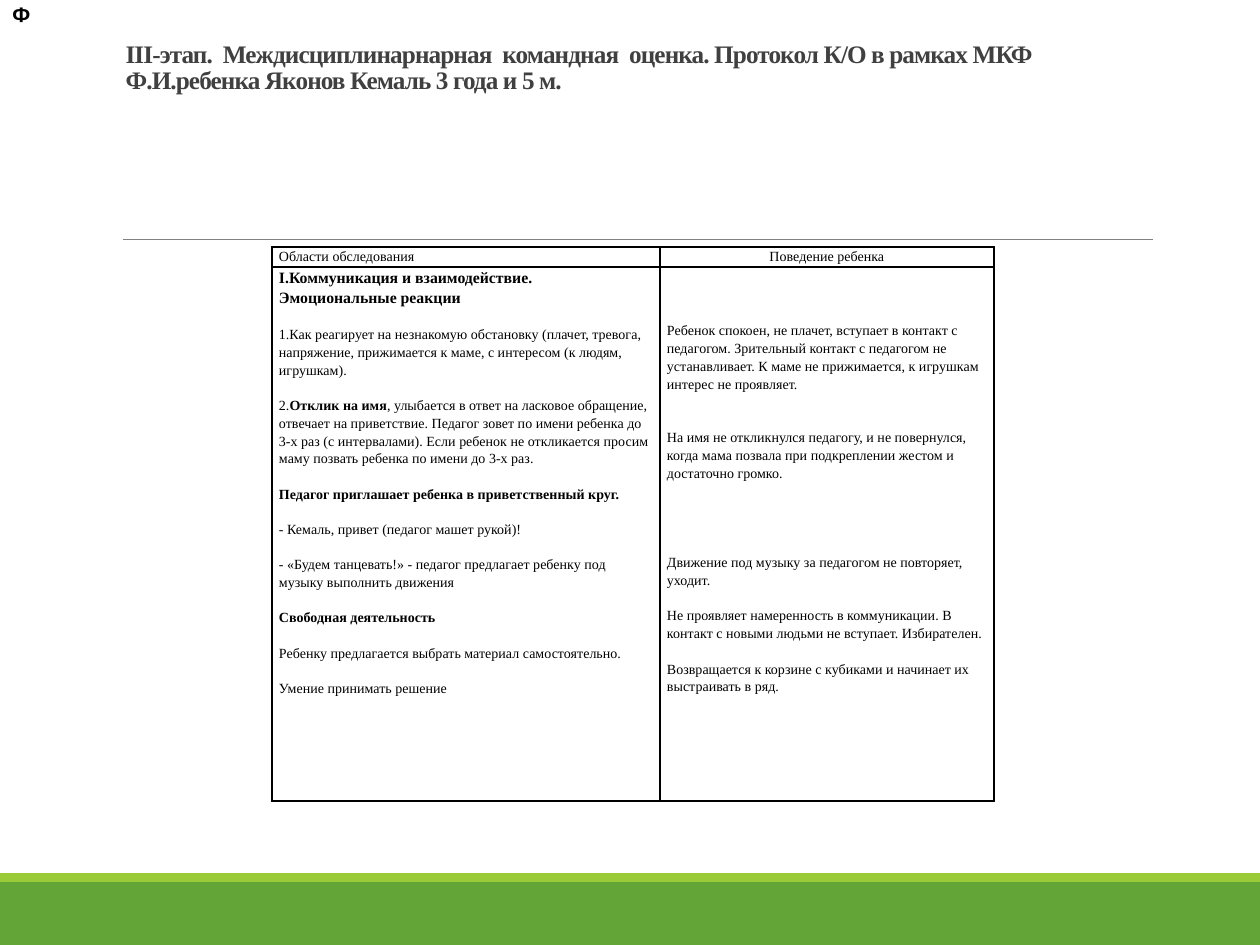
from lxml.etree import SubElement
from pptx import Presentation
from pptx.dml.color import RGBColor
from pptx.enum.shapes import MSO_CONNECTOR, MSO_SHAPE
from pptx.enum.text import MSO_ANCHOR, MSO_AUTO_SIZE, PP_ALIGN
from pptx.oxml.ns import qn
from pptx.util import Pt

COLORS = {
    "ink": "000000",
    "title": "404040",
    "rule": "808080",
    "green": "63A537",
    "lime": "99CB38",
    "paper": "FFFFFF",
}
SERIF = "Times New Roman"
TITLE = {"name": SERIF, "size": Pt(14.4), "bold": True}
BODY = {"name": SERIF, "size": Pt(8), "bold": False}
BOLD = {**BODY, "bold": True}
HEAD = {**BOLD, "size": Pt(9)}
MARK = {"name": "Arial", "size": Pt(12), "bold": True}

HEADS = [
    ("Области обследования", PP_ALIGN.LEFT),
    ("Поведение ребенка", PP_ALIGN.CENTER),
]
TASKS = [
    [("I.Коммуникация и взаимодействие. Эмоциональные реакции", HEAD)],
    [("1.Как реагирует на незнакомую обстановку (плачет, тревога, напряжение, "
      "прижимается к маме, с интересом (к людям, игрушкам).", BODY)],
    [("2.", BODY), ("Отклик на имя", BOLD),
     (", улыбается в ответ на ласковое обращение, отвечает на приветствие. "
      "Педагог зовет по имени ребенка до 3-х раз (с интервалами). Если ребенок "
      "не откликается просим маму позвать ребенка по имени до 3-х раз.", BODY)],
    [("Педагог приглашает ребенка в приветственный круг.", BOLD)],
    [("- Кемаль, привет (педагог машет рукой)!", BODY)],
    [("- «Будем танцевать!» - педагог предлагает ребенку под музыку "
      "выполнить движения", BODY)],
    [("Свободная деятельность", BOLD)],
    [("Ребенку предлагается выбрать материал самостоятельно.", BODY)],
    [("Умение принимать решение", BODY)],
]
NOTES = [
    ("Ребенок спокоен, не плачет, вступает в контакт с педагогом. Зрительный "
     "контакт с педагогом не устанавливает. К маме не прижимается, к игрушкам "
     "интерес не проявляет.", 20.3),
    ("На имя не откликнулся педагогу, и не повернулся, когда мама позвала при "
     "подкреплении жестом и достаточно громко.", 40.7),
    ("Движение под музыку за педагогом не повторяет, уходит.", 10.2),
    ("Не проявляет намеренность в коммуникации. В контакт с новыми людьми "
     "не вступает. Избирателен.", 10.2),
    ("Возвращается к корзине с кубиками и начинает их выстраивать в ряд.", 0),
]


def px(size):
    return round(size * 914400 / 126)


def tint(name):
    return RGBColor.from_string(COLORS[name])


def apply(target, values):
    for key, value in values.items():
        setattr(target, key, value)


class Deck:
    def __init__(self, wide, high):
        self.file = Presentation()
        self.file.slide_width, self.file.slide_height = px(wide), px(high)
        self.slide = self.file.slides.add_slide(self.file.slide_layouts[5])
        self.shapes = self.slide.shapes

    def words(self, para, text, style, color="ink"):
        run = para.add_run()
        run.text = text
        apply(run.font, style)
        run.font.color.rgb = tint(color)
        return run

    def title(self, box, lines):
        shape = self.shapes.title
        apply(shape, dict(zip(("left", "top", "width", "height"), map(px, box))))
        frame = shape.text_frame
        apply(frame, {"auto_size": MSO_AUTO_SIZE.NONE, "word_wrap": True,
                      "vertical_anchor": MSO_ANCHOR.BOTTOM})
        para = frame.paragraphs[0]
        apply(para, {"alignment": PP_ALIGN.LEFT, "line_spacing": 0.85})
        for index, line in enumerate(lines):
            if index:
                para.add_line_break()
            run = self.words(para, line, TITLE, "title")
            run._r.get_or_add_rPr().set("spc", "-50")

    def band(self, box, color):
        shape = self.shapes.add_shape(MSO_SHAPE.RECTANGLE, *map(px, box))
        shape.shadow.inherit = False
        shape.fill.solid()
        shape.fill.fore_color.rgb = tint(color)
        shape.line.fill.background()

    def rule(self, ends, color):
        line = self.shapes.add_connector(MSO_CONNECTOR.STRAIGHT, *map(px, ends))
        line.line.color.rgb = tint(color)
        line.line.width = Pt(0.5)
        SubElement(line._element.spPr, qn("a:effectLst"))

    def label(self, box, text):
        frame = self.shapes.add_textbox(*map(px, box)).text_frame
        apply(frame, {"word_wrap": True, "margin_top": px(8),
                      "vertical_anchor": MSO_ANCHOR.TOP})
        self.words(frame.paragraphs[0], text, MARK)

    def table(self, spot, cols, rows):
        box = (*spot, sum(cols), sum(rows))
        grid = self.shapes.add_table(len(rows), len(cols), *map(px, box)).table
        apply(grid, {"first_row": False, "horz_banding": False})
        for col, wide in zip(grid.columns, cols):
            col.width = px(wide)
        for row, high in zip(grid.rows, rows):
            row.height = px(high)
        for cell in grid.iter_cells():
            apply(cell, {"margin_left": px(7), "margin_right": px(7),
                         "margin_top": 0, "margin_bottom": 0})
            self.border(cell)
            cell.fill.solid()
            cell.fill.fore_color.rgb = tint("paper")
        return grid

    def border(self, cell):
        props = cell._tc.get_or_add_tcPr()
        for side in ("lnL", "lnR", "lnT", "lnB"):
            line = SubElement(props, qn("a:" + side), w=str(Pt(1)))
            fill = SubElement(line, qn("a:solidFill"))
            SubElement(fill, qn("a:srgbClr"), val=COLORS["ink"])

    def fill(self, cell, items):
        frame = cell.text_frame
        for index, (runs, style) in enumerate(items):
            para = frame.add_paragraph() if index else frame.paragraphs[0]
            apply(para, {"line_spacing": 1.15, **style})
            for text, font in runs:
                self.words(para, text, font)

    def save(self):
        self.file.save("out.pptx")


def main():
    deck = Deck(1260, 945)
    deck.band((0, 882, 1260, 63), "green")
    deck.band((0, 873, 1260, 9), "lime")
    deck.rule((123, 239, 1153, 239), "rule")
    deck.title((113, 39, 1040, 62), [
        "ІІІ-этап.  Междисциплинарнарная  командная  оценка. Протокол К/О в рамках МКФ",
        "Ф.И.ребенка Яконов Кемаль 3 года и 5 м.",
    ])
    grid = deck.table((272, 247), (388, 334), (20, 534))
    for col, (text, align) in enumerate(HEADS):
        deck.fill(grid.cell(0, col), [([(text, BODY)], {"alignment": align})])
    deck.fill(grid.cell(1, 0), [(runs, {"space_after": Pt(10)}) for runs in TASKS])
    notes = grid.cell(1, 1)
    notes.margin_top = px(54)
    deck.fill(notes, [([(text, BODY)], {"space_after": Pt(gap)}) for text, gap in NOTES])
    deck.label((0, -6, 280, 77), "Ф")
    deck.save()


if __name__ == "__main__":
    main()
